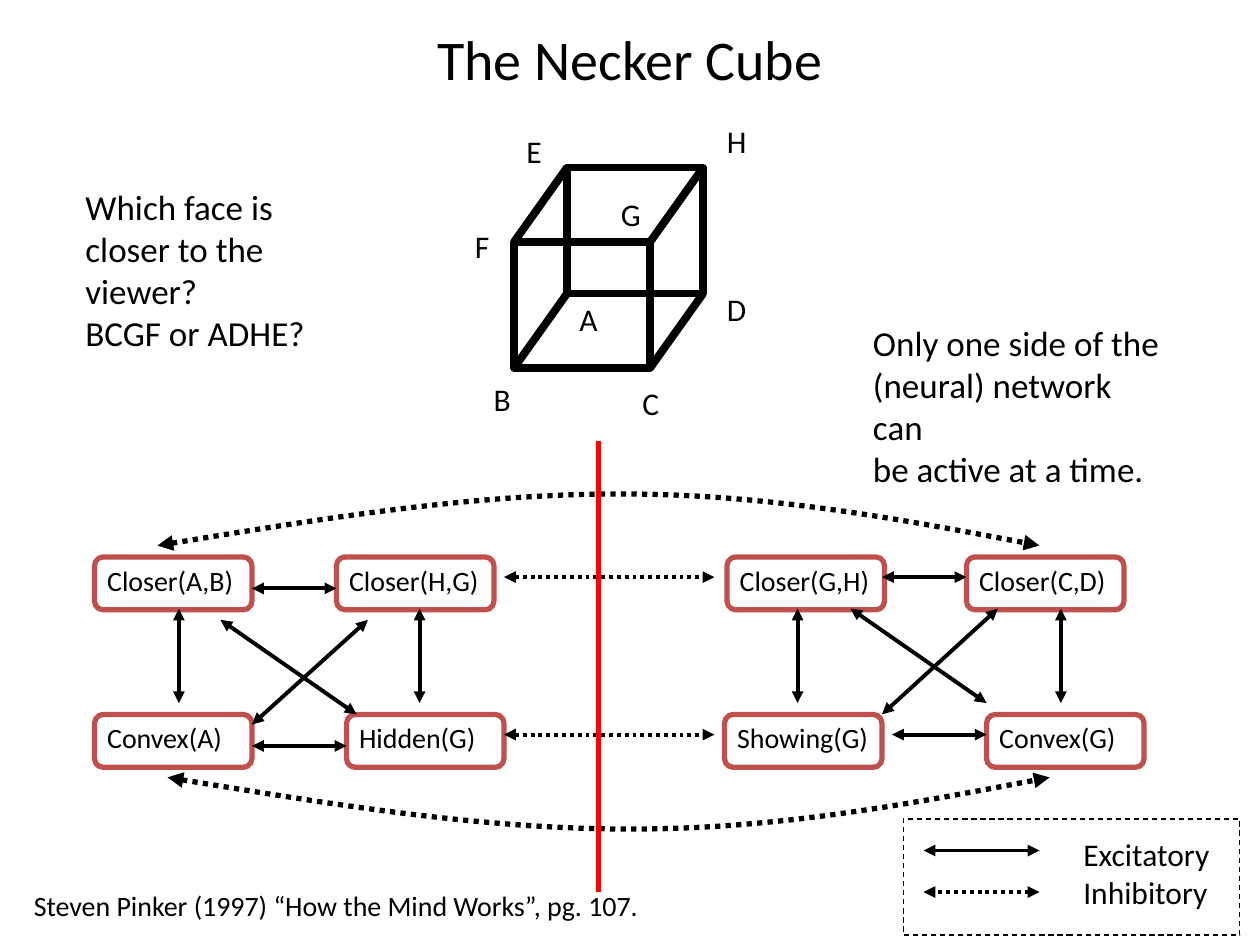
from pptx import Presentation
from pptx.dml.color import RGBColor
from pptx.enum.dml import MSO_LINE
from pptx.enum.shapes import MSO_CONNECTOR, MSO_SHAPE
from pptx.enum.text import MSO_ANCHOR, PP_ALIGN
from pptx.oxml.ns import qn
from pptx.util import Inches, Pt

FONT = "Calibri"
BLACK, RED, BRICK = "000000", "FF0000", "C0504D"
TOP_ROW, BOTTOM_ROW = 4.42, 5.67
NODE_WIDTH, NODE_HEIGHT = 1.25, 0.42
CUBE_WIDTH, CUBE_HEIGHT = 1.08, 1
FRONT_FACE, BACK_FACE = (4.08, 1.92), (4.5, 1.33)

NODES = [
    ("Closer(A,B)", 0.75, TOP_ROW), ("Closer(H,G)", 2.67, TOP_ROW),
    ("Closer(G,H)", 5.77, TOP_ROW), ("Closer(C,D)", 7.67, TOP_ROW),
    ("Convex(A)", 0.75, BOTTOM_ROW), ("Hidden(G)", 2.75, BOTTOM_ROW),
    ("Showing(G)", 5.75, BOTTOM_ROW), ("Convex(G)", 7.83, BOTTOM_ROW),
]
VERTICAL_LINKS = [1.42, 3.33, 6.33, 8.42]
EXCITATORY_LINKS = [
    ((2, 4.67), (2.67, 4.67)), ((2.75, 5.92), (2, 5.92)),
    ((2, 5.75), (2.92, 4.92)), ((2.83, 5.67), (1.75, 4.92)),
    ((7, 4.58), (7.67, 4.58)), ((7.83, 5.83), (7.08, 5.83)),
    ((7, 5.67), (7.92, 4.83)), ((7.83, 5.58), (6.75, 4.83)),
]
CORNER_LABELS = [
    ("B", 3.82, 2.97), ("G", 4.83, 1.5), ("C", 5, 3), ("H", 5.67, 0.92),
    ("D", 5.67, 2.25), ("F", 3.67, 1.75), ("E", 4.08, 1), ("A", 4.5, 2.33),
]


def rgb(color):
    return RGBColor.from_string(color)


def style_line(line, color, width, dash=None):
    line.color.rgb = rgb(color)
    line.width = Pt(width)
    if dash is not None:
        line.dash_style = dash


def add_arrowheads(shape):
    outline = shape.line._get_or_add_ln()
    for end in ("a:headEnd", "a:tailEnd"):
        outline.append(outline.makeelement(qn(end), {"type": "triangle"}))


def write(frame, lines, size, align=PP_ALIGN.LEFT):
    frame.text = "\n".join(lines)
    for paragraph in frame.paragraphs:
        paragraph.alignment = align
        paragraph.font.name = FONT
        paragraph.font.size = Pt(size)
        paragraph.font.color.rgb = rgb(BLACK)


def add_text(slide, lines, left, top, width, height, size, wrap=False,
             align=PP_ALIGN.LEFT, anchor=MSO_ANCHOR.TOP):
    frame = slide.shapes.add_textbox(
        Inches(left), Inches(top), Inches(width), Inches(height)).text_frame
    frame.word_wrap = wrap
    frame.vertical_anchor = anchor
    write(frame, lines, size, align)


def add_outline(slide, preset, left, top, width, height, color, weight, dash=None):
    shape = slide.shapes.add_shape(
        preset, Inches(left), Inches(top), Inches(width), Inches(height))
    shape.shadow.inherit = False
    shape.fill.background()
    style_line(shape.line, color, weight, dash)
    return shape


def add_line(slide, start, end, color, width, dash=None):
    line = slide.shapes.add_connector(
        MSO_CONNECTOR.STRAIGHT, *(Inches(value) for value in (*start, *end)))
    style_line(line.line, color, width, dash)
    properties = line._element.spPr
    properties.append(properties.makeelement(qn("a:effectLst"), {}))
    return line


def add_link(slide, start, end, dash=None):
    add_arrowheads(add_line(slide, start, end, BLACK, 2.25, dash))


def add_inhibitory_arc(slide, left, base, bulge):
    """Draw two cubic curves from left to right, peaking at base + bulge."""
    offsets = [(1.25, 0.5), (2.5, 1), (3.67, 1), (4.83, 1), (5.92, 0.5), (7, 0)]
    builder = slide.shapes.build_freeform(Inches(left), Inches(base))
    builder.add_line_segments(
        [(Inches(left + x), Inches(base + bulge * y)) for x, y in offsets],
        close=False)
    arc = builder.convert_to_shape()
    segments = arc._element.xpath(".//a:lnTo")
    for first in (0, 3):
        curve = segments[first]
        curve.tag = qn("a:cubicBezTo")
        for segment in segments[first + 1:first + 3]:
            curve.append(segment[0])
            segment.getparent().remove(segment)
    arc.shadow.inherit = False
    arc.fill.background()
    style_line(arc.line, BLACK, 3, MSO_LINE.ROUND_DOT)
    add_arrowheads(arc)


def add_node(slide, label, left, top):
    node = add_outline(slide, MSO_SHAPE.ROUNDED_RECTANGLE, left, top,
                       NODE_WIDTH, NODE_HEIGHT, BRICK, 3)
    frame = node.text_frame
    frame.margin_left, frame.margin_top = Inches(0.08), Inches(0.03)
    frame.margin_right = frame.margin_bottom = 0
    frame.vertical_anchor = MSO_ANCHOR.TOP
    write(frame, [label], 16)


def add_cube(slide):
    for left, top in (FRONT_FACE, BACK_FACE):
        add_outline(slide, MSO_SHAPE.RECTANGLE, left, top,
                    CUBE_WIDTH, CUBE_HEIGHT, BLACK, 4.5)
    for dx in (0, CUBE_WIDTH):
        for dy in (0, CUBE_HEIGHT):
            front, back = ((x + dx, y + dy) for x, y in (FRONT_FACE, BACK_FACE))
            add_line(slide, front, back, BLACK, 4.5)
    for letter, left, top in CORNER_LABELS:
        add_text(slide, [letter], left, top, 0.37, 0.4, 18)


def add_network(slide):
    for node in NODES:
        add_node(slide, *node)
    for x in VERTICAL_LINKS:
        add_link(slide, (x, 5.58), (x, 4.83))
    for start, end in EXCITATORY_LINKS:
        add_link(slide, start, end)
    add_inhibitory_arc(slide, 1.33, 6.17, 0.41)
    add_inhibitory_arc(slide, 1.25, 4.33, -0.41)
    for y in (4.58, 5.83):
        add_link(slide, (4, y), (5.67, y), MSO_LINE.ROUND_DOT)


def add_legend(slide):
    add_outline(slide, MSO_SHAPE.RECTANGLE, 7.17, 6.5, 2.67, 0.92,
                BLACK, 0.75, MSO_LINE.DASH)
    add_link(slide, (8.25, 6.75), (7.33, 6.75))
    add_link(slide, (8.25, 7.08), (7.33, 7.08), MSO_LINE.ROUND_DOT)
    add_text(slide, ["Excitatory", "Inhibitory"], 8.5, 6.58, 1.24, 0.7, 18)


def main():
    presentation = Presentation()
    presentation.slide_width, presentation.slide_height = Inches(10), Inches(7.5)
    slide = presentation.slides.add_slide(presentation.slide_layouts[6])
    add_text(slide, ["The Necker Cube"], 0.75, 0.25, 8.5, 0.42, 32,
             align=PP_ALIGN.CENTER, anchor=MSO_ANCHOR.MIDDLE, wrap=True)
    add_legend(slide)
    add_network(slide)
    add_cube(slide)
    add_text(slide, ["Which face is", "closer to the viewer?", "BCGF or ADHE?"],
             0.58, 1.42, 2, 1.1, 20, wrap=True)
    add_line(slide, (4.75, 3.5), (4.75, 7.08), RED, 3)
    add_text(slide, ["Only one side of the", "(neural) network can", "be active at a time."],
             6.83, 2.5, 2.51, 1.1, 20, wrap=True)
    add_text(slide, ["Steven Pinker (1997) “How the Mind Works”, pg. 107."],
             0.17, 7, 5.13, 0.37, 16)
    presentation.save("out.pptx")


if __name__ == "__main__":
    main()
